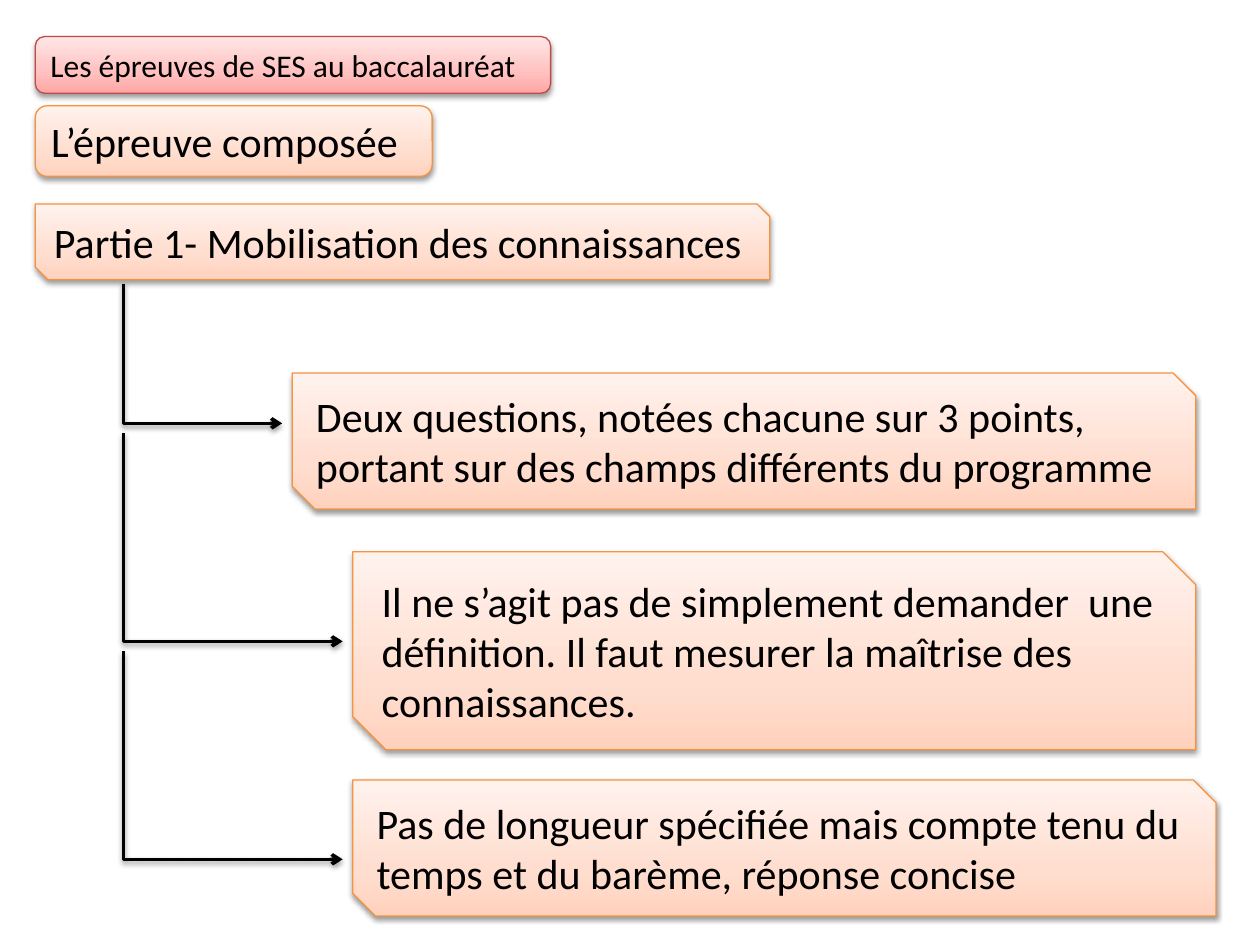
import lxml.etree
import pptx
import pptx.dml.color
import pptx.enum.shapes
import pptx.enum.text
import pptx.oxml
import pptx.oxml.ns
import pptx.util

Inches = pptx.util.Inches
Shapes = pptx.enum.shapes.MSO_SHAPE
AutoSize = pptx.enum.text.MSO_AUTO_SIZE
NAMESPACE = pptx.oxml.ns.nsdecls("a")
COLOURS = {
    "black": "000000",
    "red_line": "BF4C48",
    "orange_line": "F69240",
}
GRADIENTS = {
    "red": {0: "FFA6A5", 35: "FFC0BF", 100: "FFE7E7"},
    "orange": {0: "FFD2BD", 35: "FFDED0", 100: "FFF2ED"},
}
LEFT = 0.28
TRUNK = 0.98
TITLE_PLACE = (LEFT, 0.29, 4.09, 0.45)
TITLE_INSET = 0.02
HEADINGS = [
    ("L’épreuve composée", Shapes.ROUNDED_RECTANGLE, (LEFT, 0.84, 3.15, 0.56)),
    ("Partie 1- Mobilisation des connaissances", Shapes.SNIP_2_DIAG_RECTANGLE,
     (LEFT, 1.62, 5.83, 0.6)),
]
BRANCHES = [
    ("Deux questions, notées chacune sur 3 points, portant sur des champs "
     "différents du programme", (2.32, 2.96, 7.17, 1.08), (2.25, 3.36)),
    ("Il ne s’agit pas de simplement demander  une définition. Il faut mesurer "
     "la maîtrise des connaissances.", (2.8, 4.38, 6.69, 1.57), (3.44, 5.09)),
    ("Pas de longueur spécifiée mais compte tenu du temps et du barème, "
     "réponse concise", (2.8, 6.19, 6.85, 1.08), (5.17, 6.82)),
]


def colour(name):
    return pptx.dml.color.RGBColor.from_string(COLOURS[name])


def set_values(target, values):
    for name, value in values.items():
        setattr(target, name, value)


def add_shadow(shape):
    shape._element.spPr.append(pptx.oxml.parse_xml(
        f'<a:effectLst {NAMESPACE}><a:outerShdw blurRad="40000" dist="20000" '
        'dir="5400000" rotWithShape="0"><a:srgbClr val="000000">'
        '<a:alpha val="38000"/></a:srgbClr></a:outerShdw></a:effectLst>'))


def fill_gradient(shape, stops):
    shape.fill.gradient()
    shape.fill.gradient_angle = 90
    stop_list = shape._element.spPr.find(".//" + pptx.oxml.ns.qn("a:gsLst"))
    for stop in list(stop_list):
        stop_list.remove(stop)
    for position, value in stops.items():
        stop_list.append(pptx.oxml.parse_xml(
            f'<a:gs {NAMESPACE} pos="{position * 1000}">'
            f'<a:srgbClr val="{value}"/></a:gs>'))


def write_text(box, text, size, auto_size):
    set_values(box.text_frame, {
        "word_wrap": True,
        "auto_size": auto_size,
        "vertical_anchor": pptx.enum.text.MSO_ANCHOR.MIDDLE,
    })
    para = box.text_frame.paragraphs[0]
    para.alignment = pptx.enum.text.PP_ALIGN.LEFT
    span = para.add_run()
    span.text = text
    set_values(span.font, {"name": "Calibri", "size": pptx.util.Pt(size)})
    span.font.color.rgb = colour("black")


def add_panel(page, kind, place, theme):
    panel = page.shapes.add_shape(kind, *map(Inches, place))
    fill_gradient(panel, GRADIENTS[theme])
    panel.line.color.rgb = colour(f"{theme}_line")
    panel.line.width = pptx.util.Pt(0.75)
    add_shadow(panel)
    return panel


def add_title(page, text):
    panel = add_panel(page, Shapes.ROUNDED_RECTANGLE, TITLE_PLACE, "red")
    title = page.shapes.title
    panel._element.addnext(title._element)
    left, top, width, height = map(Inches, TITLE_PLACE)
    set_values(title, {
        "left": left + Inches(TITLE_INSET), "top": top,
        "width": width - 2 * Inches(TITLE_INSET), "height": height,
    })
    set_values(title.text_frame, {"margin_top": 0, "margin_bottom": 0})
    write_text(title, text, 18, AutoSize.NONE)


def add_box(page, text, kind, place):
    box = add_panel(page, kind, place, "orange")
    write_text(box, text, 24, AutoSize.SHAPE_TO_FIT_TEXT)


def add_elbow_arrow(page, top, right, bottom):
    arrow = page.shapes.add_connector(
        pptx.enum.shapes.MSO_CONNECTOR.ELBOW,
        Inches(TRUNK), Inches(top), Inches(right), Inches(bottom))
    arrow.line.color.rgb = colour("black")
    arrow.line.width = pptx.util.Pt(2)
    properties = arrow._element.spPr
    guides = properties.find(".//" + pptx.oxml.ns.qn("a:avLst"))
    lxml.etree.SubElement(guides, pptx.oxml.ns.qn("a:gd"), name="adj1", fmla="val 0")
    outline = properties.find(pptx.oxml.ns.qn("a:ln"))
    lxml.etree.SubElement(outline, pptx.oxml.ns.qn("a:tailEnd"), type="arrow")
    add_shadow(arrow)


def main():
    deck = pptx.Presentation()
    set_values(deck, {"slide_width": Inches(10), "slide_height": Inches(7.5)})
    page = deck.slides.add_slide(deck.slide_layouts.get_by_name("Title Only"))
    add_title(page, "Les épreuves de SES au baccalauréat")
    for text, kind, place in HEADINGS:
        add_box(page, text, kind, place)
    for text, place, (top, bottom) in BRANCHES:
        add_elbow_arrow(page, top, place[0] - 0.08, bottom)
        add_box(page, text, Shapes.SNIP_2_DIAG_RECTANGLE, place)
    deck.save("out.pptx")


if __name__ == "__main__":
    main()
